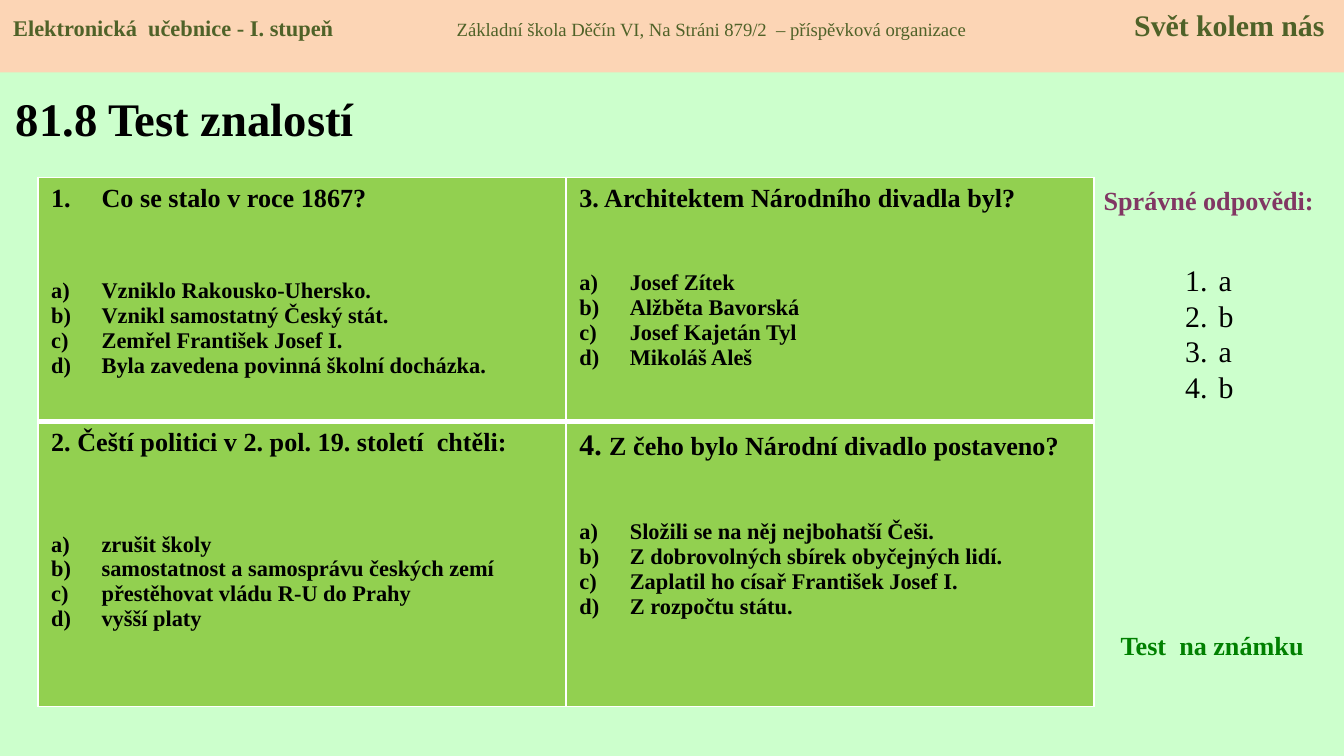
from dataclasses import dataclass

from lxml import etree
from pptx import Presentation, util as u
from pptx.dml.color import RGBColor
from pptx.enum import shapes, text
from pptx.oxml.ns import qn

Pt = u.Pt


@dataclass(frozen=True)
class Theme:
    font: str = "Times New Roman"
    page: str = "CCFFCC"
    band: str = "FCD5B5"
    band_text: str = "4F6228"
    cell: str = "92D050"
    border: str = "FFFFFF"
    ink: str = "000000"
    heading: str = "813763"
    grade: str = "008000"
    title: int = 25
    large: int = 16
    question: int = 14
    option: int = 12
    small: int = 10


T = Theme()
NUMBERS, LETTERS = "arabicPeriod", "alphaLcParenR"
HANG = 27

# Question parts, numbering, indent, gap before the options, options
QUIZ = [
    [([("Co se stalo v roce 1867?", T.question)], NUMBERS, HANG, 35.4,
      ["Vzniklo Rakousko-Uhersko.", "Vznikl samostatný Český stát.",
       "Zemřel František Josef I.", "Byla zavedena povinná školní docházka."]),
     ([("3. Architektem Národního divadla byl?", T.question)], None, HANG, 31,
      ["Josef Zítek", "Alžběta Bavorská", "Josef Kajetán Tyl", "Mikoláš Aleš"])],
    [([("2. Čeští politici v 2. pol. 19. století  chtěli:", T.question)], None, 0, 40,
      ["zrušit školy", "samostatnost a samosprávu českých zemí",
       "přestěhovat vládu R-U do Prahy", "vyšší platy"]),
     ([("4. ", T.large), ("Z čeho bylo Národní divadlo postaveno?", T.question)],
      None, HANG, 31,
      ["Složili se na něj nejbohatší Češi.", "Z dobrovolných sbírek obyčejných lidí.",
       "Zaplatil ho císař František Josef I.", "Z rozpočtu státu."])],
]


def rgb(value):
    return RGBColor.from_string(value)


def add_text(p, content, size=T.question, color=T.ink, bold=True):
    r = p.add_run()
    r.text = content
    r.font.name, r.font.size, r.font.bold = T.font, Pt(size), bold
    r.font.color.rgb = rgb(color)


def next_paragraph(tf):
    return tf.paragraphs[0] if not tf.paragraphs[0].runs else tf.add_paragraph()


def set_list(p, hang, numbering=None):
    pPr = p._p.get_or_add_pPr()
    pPr.set("marL", str(Pt(hang)))
    pPr.set("indent", str(-Pt(hang)))
    if numbering:
        etree.SubElement(pPr, qn("a:buAutoNum")).set("type", numbering)
    else:
        etree.SubElement(pPr, qn("a:buNone"))


def set_tabs(p, stops):
    tabs = etree.SubElement(p._p.get_or_add_pPr(), qn("a:tabLst"))
    for pos, align in stops:
        etree.SubElement(tabs, qn("a:tab"), pos=str(Pt(pos)), algn=align)


def add_box(s, left, top, width, height, anchor=text.MSO_ANCHOR.TOP):
    tf = s.shapes.add_textbox(Pt(left), Pt(top), Pt(width), Pt(height)).text_frame
    tf.word_wrap = True
    tf.vertical_anchor = anchor
    return tf


def add_header(s):
    sp = s.shapes.add_shape(shapes.MSO_SHAPE.RECTANGLE, 0, 0, Pt(720), Pt(38.9))
    sp.shadow.inherit = False
    sp.fill.solid()
    sp.fill.fore_color.rgb = rgb(T.band)
    sp.line.fill.background()
    tf = sp.text_frame
    tf.vertical_anchor = text.MSO_ANCHOR.TOP
    p = tf.paragraphs[0]
    p.alignment = text.PP_ALIGN.LEFT
    set_tabs(p, [(237.6, "l"), (702.5, "r")])
    add_text(p, "Elektronická  učebnice - I. stupeň\t", T.option, T.band_text)
    add_text(p, "Základní škola Děčín VI, Na Stráni 879/2  – příspěvková organizace\t",
             T.small, T.band_text, bold=False)
    add_text(p, "Svět kolem nás", T.large, T.band_text)


def set_borders(cell, widths):
    tcPr = cell._tc.get_or_add_tcPr()
    for i, (side, width) in enumerate(zip("LRTB", widths)):
        ln = etree.Element(qn(f"a:ln{side}"), w=str(Pt(width)))
        fill = etree.SubElement(ln, qn("a:solidFill"))
        etree.SubElement(fill, qn("a:srgbClr"), val=T.border)
        tcPr.insert(i, ln)


def fill_cell(cell, question, numbering, hang, gap, options):
    cell.fill.solid()
    cell.fill.fore_color.rgb = rgb(T.cell)
    p = cell.text_frame.paragraphs[0]
    set_list(p, hang, numbering)
    for content, size in question:
        add_text(p, content, size)
    for i, option in enumerate(options):
        p = cell.text_frame.add_paragraph()
        p.space_before = Pt(0 if i else gap)
        set_list(p, HANG, LETTERS)
        add_text(p, option, T.option)


def add_quiz(s):
    table = s.shapes.add_table(2, 2, Pt(20.2), Pt(95), Pt(566), Pt(283.6)).table
    table.first_row = table.horz_banding = False
    for col in table.columns:
        col.width = Pt(283)
    for row, height in zip(table.rows, (131, 152.6)):
        row.height = Pt(height)
    for i, row in enumerate(QUIZ):
        for j, item in enumerate(row):
            cell = table.cell(i, j)
            fill_cell(cell, *item)
            set_borders(cell, (1, 1, 3, 1) if i else (1, 1, 1, 3))


def add_answers(s):
    p = add_box(s, 579.6, 95, 136, 24.5).paragraphs[0]
    p.alignment = text.PP_ALIGN.CENTER
    add_text(p, "Správné odpovědi:", color=T.heading)
    tf = add_box(s, 627.8, 136.5, 39.6, 125.6)
    for letter in "abab":
        p = next_paragraph(tf)
        set_list(p, 18, NUMBERS)
        add_text(p, letter, T.large, bold=False)


def main():
    prs = Presentation()
    prs.slide_width, prs.slide_height = Pt(720), Pt(405)
    s = prs.slides.add_slide(prs.slide_layouts[6])
    s.background.fill.solid()
    s.background.fill.fore_color.rgb = rgb(T.page)

    # Title
    tf = add_box(s, 1.4, 39.6, 229.7, 46.8, text.MSO_ANCHOR.MIDDLE)
    add_text(tf.paragraphs[0], "81.8 Test znalostí", T.title)

    # Questions and key
    add_quiz(s)
    add_answers(s)

    # Grading note
    tf = add_box(s, 593.3, 333.4, 113, 24.5)
    tf.word_wrap = False
    add_text(tf.paragraphs[0], "Test  na známku", color=T.grade)

    # Top band
    add_header(s)
    prs.save("out.pptx")


if __name__ == "__main__":
    main()
